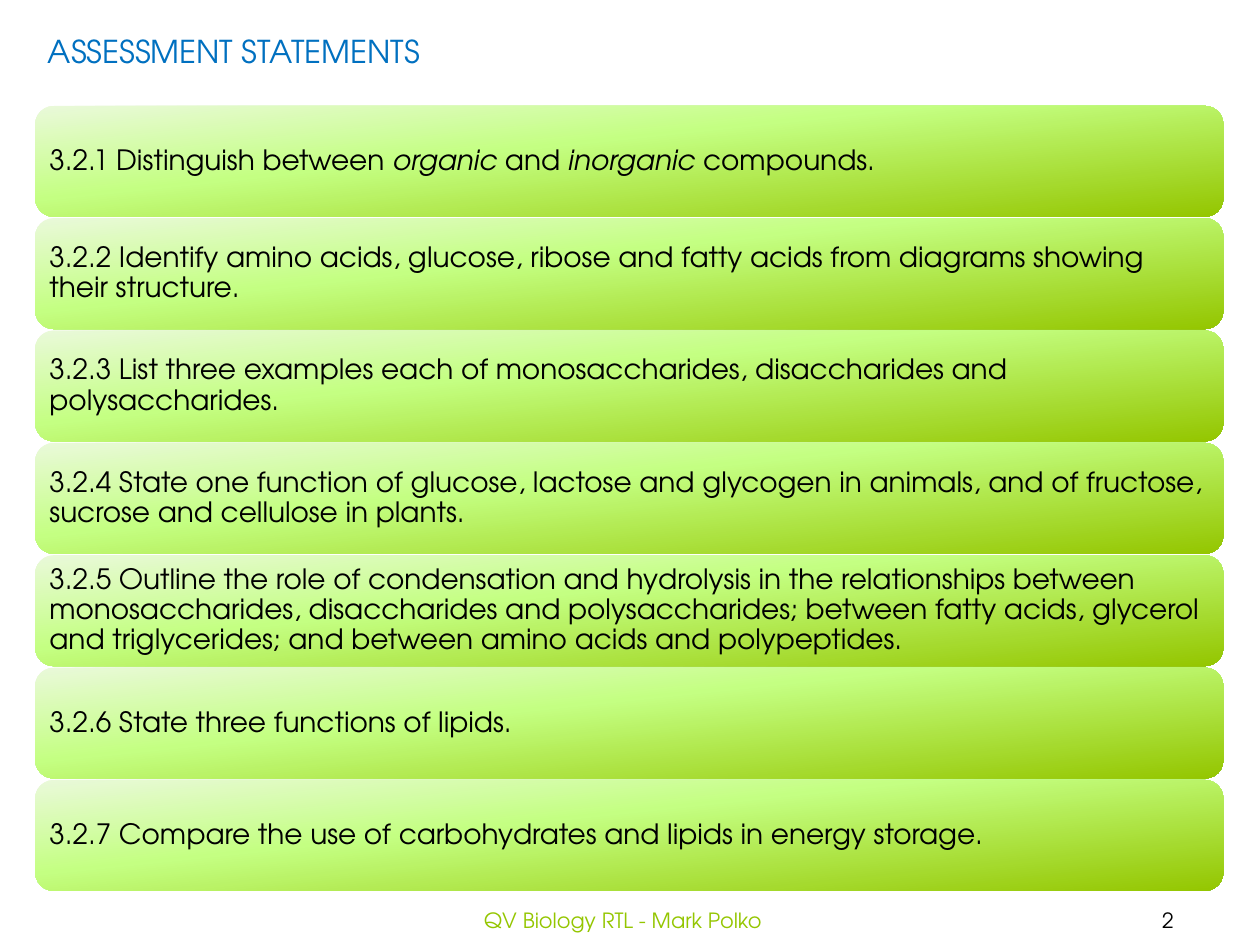
import dataclasses

import lxml.etree
import pptx
import pptx.dml.color
import pptx.enum.shapes
import pptx.enum.text
import pptx.oxml.ns
import pptx.util

FONT = "TeX Gyre Adventor"
COLORS = {
    "title": "0070C0",
    "text": "000000",
    "footer": "94C600",
}
GRADIENT = ((0, "EAF9DA"), (40, "C4FF82"), (100, "94C600"))
GRADIENT_ANGLE = 84
WIDTH, HEIGHT = pptx.util.Inches(10), pptx.util.Inches(7.5)
ALIGN = pptx.enum.text.PP_ALIGN
ANCHOR = pptx.enum.text.MSO_ANCHOR


@dataclasses.dataclass(frozen=True)
class Box:
    left: float
    top: float
    width: float
    height: float

    def lengths(self) -> list[int]:
        return [pptx.util.Inches(v) for v in
                (self.left, self.top, self.width, self.height)]


@dataclasses.dataclass(frozen=True)
class Column:
    """A column of equal rows, from the top of the first to the top of the last."""
    first: Box
    last_top: float
    rows: int

    def row(self, i: int) -> Box:
        pitch = (self.last_top - self.first.top) / (self.rows - 1)
        return dataclasses.replace(self.first, top=self.first.top + i * pitch)


@dataclasses.dataclass(frozen=True)
class Label:
    text: str
    box: Box
    color: str


# Every second piece of a statement is italic.
STATEMENTS = (
    ("3.2.1 Distinguish between ", "organic ", "and ", "inorganic ", "compounds."),
    ("3.2.2 Identify amino acids, glucose, ribose and fatty acids from diagrams "
     "showing their structure.",),
    ("3.2.3 List three examples each of monosaccharides, disaccharides and "
     "polysaccharides.",),
    ("3.2.4 State one function of glucose, lactose and glycogen in animals, and of "
     "fructose, sucrose and cellulose in plants.",),
    ("3.2.5 Outline the role of condensation and hydrolysis in the relationships "
     "between monosaccharides, disaccharides and polysaccharides; between fatty "
     "acids, glycerol and triglycerides; and between amino acids and polypeptides.",),
    ("3.2.6 State three functions of lipids.",),
    ("3.2.7 Compare the use of carbohydrates and lipids in energy storage.",),
)
COLUMN = Column(Box(0.28, 0.84, 9.43, 0.88), 6.19, len(STATEMENTS))
LABELS = (
    Label("2", Box(8.54, 7.1, 1.46, 0.4), "text"),
    Label("QV Biology RTL - Mark Polko", Box(3.03, 7.1, 3.83, 0.4), "footer"),
)


def add_run(p, text: str, size: float, color: str, italic: bool = False) -> None:
    r = p.add_run()
    r.text = text
    r.font.name = FONT
    r.font.size = pptx.util.Pt(size)
    r.font.italic = italic
    r.font.color.rgb = pptx.dml.color.RGBColor.from_string(COLORS[color])


def fill_gradient(sp) -> None:
    """Give the shape the three-stop gradient, its angle running clockwise."""
    qn = pptx.oxml.ns.qn
    sp.fill.gradient()
    grad = sp._element.spPr.find(qn("a:gradFill"))
    for child in list(grad):
        grad.remove(child)
    stops = lxml.etree.SubElement(grad, qn("a:gsLst"))
    for percent, color in GRADIENT:
        stop = lxml.etree.SubElement(stops, qn("a:gs"), pos=str(percent * 1000))
        lxml.etree.SubElement(stop, qn("a:srgbClr"), val=color)
    lxml.etree.SubElement(grad, qn("a:lin"), ang=str(GRADIENT_ANGLE * 60000),
                          scaled="0")


def set_title(s) -> None:
    sp = s.shapes.title
    sp.left, sp.top, sp.width, sp.height = Box(0.28, 0.2, 3.21, 0.4).lengths()
    tf = sp.text_frame
    tf.word_wrap = False
    tf.auto_size = pptx.enum.text.MSO_AUTO_SIZE.SHAPE_TO_FIT_TEXT
    tf.vertical_anchor = ANCHOR.TOP
    p = tf.paragraphs[0]
    p.alignment = ALIGN.LEFT
    add_run(p, "ASSESSMENT STATEMENTS", 18, "title")


def add_label(s, label: Label) -> None:
    tf = s.shapes.add_textbox(*label.box.lengths()).text_frame
    tf.word_wrap = True
    tf.vertical_anchor = ANCHOR.MIDDLE
    p = tf.paragraphs[0]
    p.alignment = ALIGN.CENTER
    add_run(p, label.text, 12, label.color)


def add_statement(s, box: Box, pieces: tuple[str, ...]) -> None:
    sp = s.shapes.add_shape(pptx.enum.shapes.MSO_SHAPE.ROUNDED_RECTANGLE,
                            *box.lengths())
    sp.shadow.inherit = False
    sp.line.fill.background()
    fill_gradient(sp)
    tf = sp.text_frame
    tf.word_wrap = True
    tf.vertical_anchor = ANCHOR.MIDDLE
    tf.margin_left = tf.margin_right = pptx.util.Inches(0.07)
    tf.margin_top = tf.margin_bottom = pptx.util.Inches(0.07)
    p = tf.paragraphs[0]
    p.alignment = ALIGN.LEFT
    p.line_spacing = 0.9
    for i, piece in enumerate(pieces):
        add_run(p, piece, 16, "text", italic=i % 2 == 1)


def main() -> None:
    prs = pptx.Presentation()
    prs.slide_width, prs.slide_height = WIDTH, HEIGHT
    s = prs.slides.add_slide(prs.slide_layouts.get_by_name("Title Only"))
    set_title(s)
    for label in LABELS:
        add_label(s, label)
    for i, pieces in enumerate(STATEMENTS):
        add_statement(s, COLUMN.row(i), pieces)
    prs.save("out.pptx")


if __name__ == "__main__":
    main()
